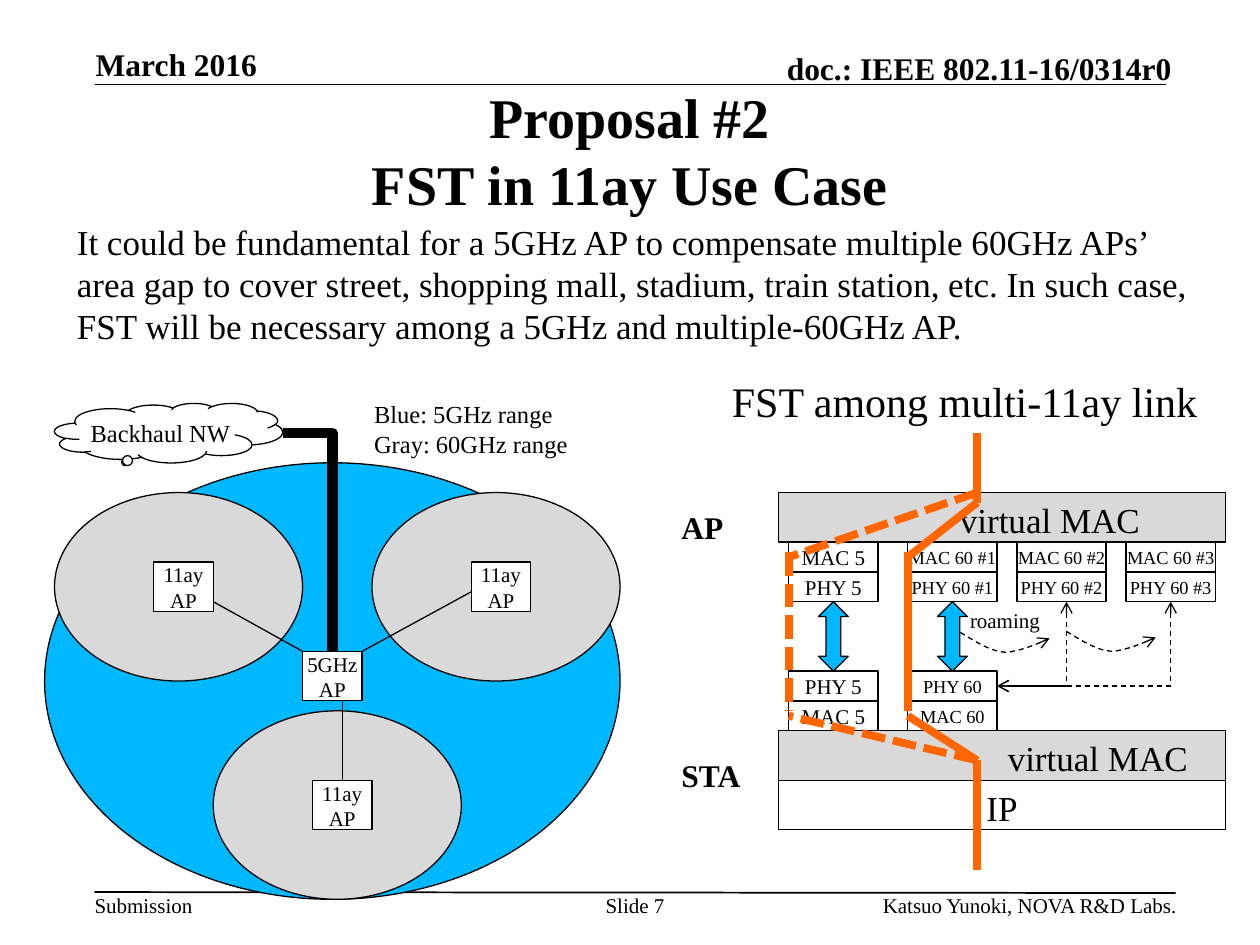
from lxml import etree
from pptx import Presentation, util as u
from pptx.dml.color import RGBColor
from pptx.enum import dml, shapes, text
from pptx.oxml.ns import qn

FONT = "Times New Roman"
BLACK, WHITE, GRAY, BLUE, ORANGE = "000000", "FFFFFF", "D9D9D9", "00B8FF", "FF6600"
KIND = shapes.MSO_SHAPE
ALIGN, ANCHOR = text.PP_ALIGN, text.MSO_ANCHOR
DASH, SHORT_DASH = dml.MSO_LINE.DASH, dml.MSO_LINE.SQUARE_DOT


def color(value):
    """Turn a hex string into a colour."""
    return RGBColor.from_string(value)


def at(col, row):
    """Return the point at a column and row of the 2 mm diagram grid."""
    return u.Cm(0.2 * col + 0.1), u.Cm(0.2 * row - 0.07)


def share(prs, left, top, width, height):
    """Turn percentages of the slide into a box."""
    w, h = prs.slide_width / 100, prs.slide_height / 100
    return [int(v) for v in (left * w, top * h, width * w, height * h)]


def write(s, lines, size, align=ALIGN.LEFT, anchor=ANCHOR.TOP, bold=False, wrap=True, inset=None):
    """Write one paragraph per line into a shape."""
    tf = s.text_frame
    tf.auto_size = text.MSO_AUTO_SIZE.NONE
    tf.word_wrap, tf.vertical_anchor = wrap, anchor
    if inset is not None:
        tf.margin_left = tf.margin_right = tf.margin_top = tf.margin_bottom = u.Inches(inset)
    for i, line in enumerate(lines):
        p = tf.add_paragraph() if i else tf.paragraphs[0]
        p.alignment = align
        for j, part in enumerate(line.split("\n")):
            if j:
                p.add_line_break()
            r = p.add_run()
            r.text = part
            r.font.name, r.font.size, r.font.bold = FONT, u.Pt(size), bold
            r.font.color.rgb = color(BLACK)


def label(prs, sp, box, lines, size, **style):
    """Add a text box placed by shares of the slide."""
    write(sp.add_textbox(*share(prs, *box)), lines, size, **style)


def shape(sp, kind, col, row, cols, rows, fill):
    """Add an outlined preset shape on the grid."""
    s = sp.add_shape(kind, *at(col, row), u.Cm(0.2 * cols), u.Cm(0.2 * rows))
    s.shadow.inherit = False
    s.fill.solid()
    s.fill.fore_color.rgb = color(fill)
    s.line.color.rgb = color(BLACK)
    s.line.width = u.Pt(0.75)
    return s


def stroke(s, hexa=BLACK, width=0.75, dash=None, ends=()):
    """Format a line and give it open arrowheads."""
    s.line.color.rgb = color(hexa)
    s.line.width = u.Pt(width)
    if dash:
        s.line.dash_style = dash
    for end in ends:
        etree.SubElement(s.line._get_or_add_ln(), qn("a:" + end), type="arrow")


def connector(sp, kind, start, end, **style):
    """Add a connector without shadow between two points."""
    s = sp.add_connector(kind, *start, *end)
    stroke(s, **style)
    etree.SubElement(s._element.spPr, qn("a:effectLst"))
    return s


def line(sp, start, end, **style):
    """Add a straight line between two grid points."""
    return connector(sp, shapes.MSO_CONNECTOR.STRAIGHT, at(*start), at(*end), **style)


def bent(sp, start, end, turned=False, **style):
    """Add a one-corner connector; turned ones run down, then left."""
    (x1, y1), (x2, y2) = start, end
    if turned:
        cx, cy, w, h = (x1 + x2) / 2, (y1 + y2) / 2, abs(y2 - y1), abs(x2 - x1)
        x1, y1, x2, y2 = cx - w / 2, cy - h / 2, cx + w / 2, cy + h / 2
    s = connector(sp, shapes.MSO_CONNECTOR.ELBOW, at(x1, y1), at(x2, y2), **style)
    spPr = s._element.spPr
    spPr.find(qn("a:prstGeom")).set("prst", "bentConnector2")
    if turned:
        spPr.find(qn("a:xfrm")).set("rot", str(90 * 60000))


def bezier(a, b, c, d, steps=10):
    """Return the points after the first on a cubic curve."""
    ts = [i / steps for i in range(1, steps + 1)]
    return [tuple((1 - t) ** 3 * p + 3 * t * (1 - t) ** 2 * q + 3 * t * t * (1 - t) * r + t ** 3 * e
                  for p, q, r, e in zip(a, b, c, d)) for t in ts]


def roaming_arrow(sp, col, row):
    """Add a dashed curved arrow starting at a grid point."""
    steps = [(0, 0), (1.5, 0.9), (3, 1.9), (4.5, 2), (6.1, 2), (9, 0.6), (9, 0.6)]
    pts = [at(col + dx, row + dy) for dx, dy in steps]
    fb = sp.build_freeform(*pts[0])
    fb.add_line_segments(bezier(*pts[:4]) + bezier(*pts[3:]), close=False)
    s = fb.convert_to_shape()
    s.shadow.inherit = False
    s.fill.background()
    stroke(s, dash=DASH, ends=["tailEnd"])


def frame(prs, sp):
    """Add the header and footer."""
    for top, right, end in ((8.93, 92.5, 8.93), (94.4, 93.3, 94.5)):
        x, y, x2, y2 = share(prs, 7.5, top, right, end)
        connector(sp, shapes.MSO_CONNECTOR.STRAIGHT, (x, y), (x2, y2), width=1)
    head = dict(bold=True, anchor=ANCHOR.BOTTOM, inset=0)
    label(prs, sp, (7.6, 4.8, 20.5, 4), ["March 2016"], 18, **head)
    label(prs, sp, (54.7, 5.2, 38.3, 4), ["doc.: IEEE 802.11-16/0314r0"], 18, align=ALIGN.RIGHT, **head)
    for left, width, words, align in ((7.5, 7.8, "Submission", ALIGN.LEFT),
                                      (47.5, 5.8, "Slide 7", ALIGN.CENTER),
                                      (58.6, 34.8, "Katsuo Yunoki, NOVA R&D Labs.", ALIGN.RIGHT)):
        label(prs, sp, (left, 94.4, width, 2.7), [words], 12, align=align, inset=0)


def headings(prs, s):
    """Fill the title and body placeholders."""
    title, body = s.placeholders
    title.left, title.top, title.width, title.height = share(prs, 7.5, 10, 85, 11.6)
    write(title, ["Proposal #2\nFST in 11ay Use Case"], 32, ALIGN.CENTER, ANCHOR.MIDDLE, bold=True)
    body.left, body.top, body.width, body.height = share(prs, 5.1, 22.67, 90.6, 14.8)
    write(body, ["It could be fundamental for a 5GHz AP to compensate multiple 60GHz APs’ area gap to cover "
                 "street, shopping mall, stadium, train station, etc. In such case, FST will be necessary "
                 "among a 5GHz and multiple-60GHz AP."], 20)
    p = body.text_frame.paragraphs[0]
    p.space_before = u.Pt(0)
    pPr = p._p.get_or_add_pPr()
    pPr.set("marL", "0")
    pPr.set("indent", "0")
    etree.SubElement(pPr, qn("a:buNone"))


def coverage(prs, sp):
    """Draw the ranges of the access points and the backhaul."""
    shape(sp, KIND.OVAL, 4, 47, 58, 44, BLUE)
    for col, row in ((5, 50), (37, 50), (21, 72)):
        shape(sp, KIND.OVAL, col, row, 25, 19, GRAY)
    boxes = []
    for col, row, name in ((15, 57, "11ay"), (47, 57, "11ay"), (31, 79, "11ay"), (30, 66, "5GHz")):
        boxes.append(shape(sp, KIND.RECTANGLE, col, row, 6, 5, WHITE))
        write(boxes[-1], [name, "AP"], 12, ALIGN.CENTER, wrap=False, inset=0)
    cloud = shape(sp, KIND.CLOUD_CALLOUT, 5, 41, 23, 6, WHITE)
    cloud.adjustments[0], cloud.adjustments[1] = -0.19, 0.49
    write(cloud, ["Backhaul NW"], 14, ALIGN.CENTER, wrap=False)
    bent(sp, (28, 44), (33, 66), width=6)
    line(sp, (36, 66), (47, 60))
    line(sp, (21, 61), (30, 66))
    line(sp, (34, 71), (34, 79)).end_connect(boxes[2], 0)
    label(prs, sp, (28.7, 41.6, 18.1, 7.6), ["Blue: 5GHz range", "Gray: 60GHz range"], 14)


def stacks(prs, sp):
    """Draw the protocol stacks of the AP and the STA."""
    for row, name, fill, indent in ((50, "virtual MAC", GRAY, 0.86), (74, "virtual MAC", GRAY, 1.62),
                                    (79, "IP", WHITE, 0.1)):
        s = shape(sp, KIND.RECTANGLE, 78, row, 45, 5, fill)
        write(s, [name], 20, ALIGN.CENTER)
        s.text_frame.margin_left = u.Inches(indent)
    for col, tag, size, rows in ((79, "5", 12, (55, 58, 71, 68)), (91, "60 #1", 10.5, (55, 58)),
                                 (91, "60", 10.5, (71, 68)), (102, "60 #2", 10.5, (55, 58)),
                                 (113, "60 #3", 10.5, (55, 58))):
        for i, row in enumerate(rows):
            layer = ("MAC", "PHY")[i % 2]
            s = shape(sp, KIND.RECTANGLE, col, row, 9, 3, WHITE)
            write(s, [f"{layer} {tag}"], size, ALIGN.CENTER, ANCHOR.MIDDLE, wrap=False)
    for top, name in ((53.07, "AP"), (79.33, "STA")):
        label(prs, sp, (53.1, top, 7.9, 5.33), [name], 18, bold=True)
    for col in (82, 94):
        shape(sp, KIND.UP_DOWN_ARROW, col, 61, 3, 7, BLUE)


def links(prs, sp):
    """Draw the data routes and the roaming between links."""
    route = dict(hexa=ORANGE, width=4.5)
    line(sp, (98, 44), (98, 51), **route)
    line(sp, (98, 77), (98, 88), **route)
    for col, top, dash in ((91, 51, None), (79, 50, SHORT_DASH)):
        line(sp, (98, top), (col, 56.5), dash=dash, **route)
        line(sp, (98, 77), (col, 72.5), dash=dash, **route)
        line(sp, (col, 56), (col, 72), dash=dash, **route)
    label(prs, sp, (76, 63.6, 10.2, 4), ["roaming"], 12)
    roaming_arrow(sp, 96.3, 64.1)
    roaming_arrow(sp, 107, 64)
    label(prs, sp, (57.1, 39.07, 40.2, 6.67), ["FST among multi-11ay link"], 24)
    for col in (107, 117.5):
        bent(sp, (col, 61), (100, 69.5), turned=True, dash=DASH, ends=["headEnd", "tailEnd"])


def main():
    """Build and save the slide."""
    prs = Presentation()
    prs.slide_width, prs.slide_height = u.Inches(10), u.Inches(7.5)
    s = prs.slides.add_slide(prs.slide_layouts[1])
    frame(prs, s.shapes)
    headings(prs, s)
    for draw in (coverage, stacks, links):
        draw(prs, s.shapes)
    prs.save("out.pptx")


if __name__ == "__main__":
    main()
